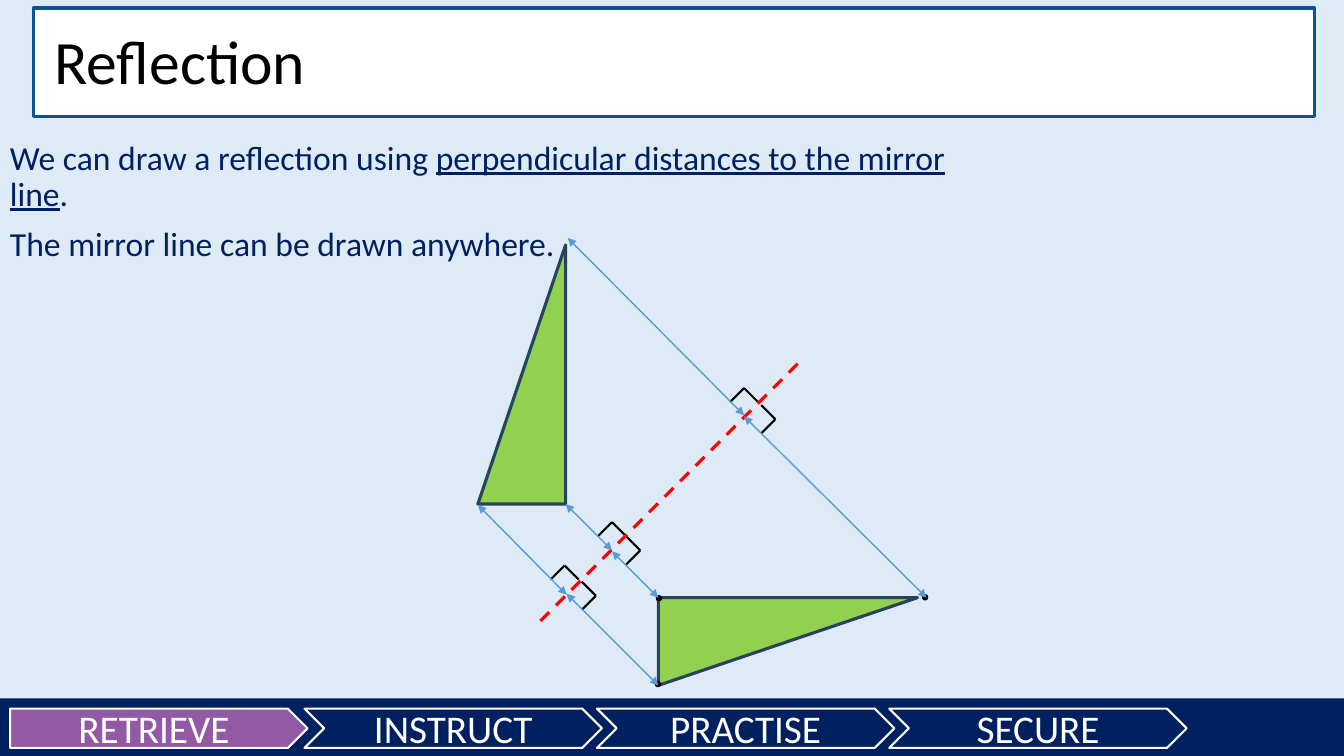
from dataclasses import dataclass

from lxml import etree
from pptx import Presentation
from pptx.dml import color
from pptx.enum import dml, shapes, text
from pptx.oxml import ns
from pptx.util import Emu, Pt

PX = 9144
NAVY, WHITE, BLACK = "002060", "FFFFFF", "000000"
GREEN, SLATE, BLUE, RED = "92D050", "28445D", "5B9BD5", "FF0000"
SHAPE = shapes.MSO_SHAPE


@dataclass
class Box:
    x: int
    y: int
    w: int
    h: int
    kind: SHAPE = SHAPE.RECTANGLE
    fill: str = WHITE
    line: str | None = None
    weight: float = 2.25
    rotation: int = 0
    flipped: bool = False


@dataclass
class Segment:
    x1: int
    y1: int
    x2: int
    y2: int
    line: str = BLUE
    weight: float = 1
    arrows: bool = True
    dashed: bool = False


def px(n: int) -> Emu:
    return Emu(n * PX)


def rgb(value: str) -> color.RGBColor:
    return color.RGBColor.from_string(value)


def add_box(slide, box: Box):
    sp = slide.shapes.add_shape(box.kind, px(box.x), px(box.y), px(box.w), px(box.h))
    sp.shadow.inherit = False
    sp.fill.solid()
    sp.fill.fore_color.rgb = rgb(box.fill)
    if box.line:
        sp.line.color.rgb = rgb(box.line)
        sp.line.width = Pt(box.weight)
    else:
        sp.line.fill.background()
    if box.kind == SHAPE.ISOSCELES_TRIANGLE:
        sp.adjustments[0] = 0
    if box.flipped:
        sp.element.spPr.get_or_add_xfrm().set("flipV", "1")
    sp.rotation = box.rotation
    return sp


def add_segment(slide, seg: Segment) -> None:
    cxn = slide.shapes.add_connector(
        shapes.MSO_CONNECTOR.STRAIGHT, px(seg.x1), px(seg.y1), px(seg.x2), px(seg.y2)
    )
    cxn.line.color.rgb = rgb(seg.line)
    cxn.line.width = Pt(seg.weight)
    if seg.dashed:
        cxn.line.dash_style = dml.MSO_LINE.DASH
    if seg.arrows:
        ln = cxn.line._get_or_add_ln()
        for end in ("a:headEnd", "a:tailEnd"):
            etree.SubElement(ln, ns.qn(end), type="triangle")
    etree.SubElement(cxn._element.spPr, ns.qn("a:effectLst"))


def style(p, size: int, fill: str) -> None:
    p.font.name = "Calibri"
    p.font.size = Pt(size)
    p.font.color.rgb = rgb(fill)


def add_text(slide, x: int, y: int, w: int, h: int, size: int, fill: str,
             paragraphs: list[list[tuple[str, bool]]]):
    tf = slide.shapes.add_textbox(px(x), px(y), px(w), px(h)).text_frame
    tf.word_wrap = True
    for i, runs in enumerate(paragraphs):
        p = tf.add_paragraph() if i else tf.paragraphs[0]
        p.line_spacing = 0.9
        if i:
            p.space_before = Pt(10)
        style(p, size, fill)
        for words, underlined in runs:
            r = p.add_run()
            r.text = words
            if underlined:
                r.font.underline = True
    return tf


def add_stages(slide) -> None:
    for i, name in enumerate(("RETRIEVE", "INSTRUCT", "PRACTISE", "SECURE")):
        kind, fill = (SHAPE.CHEVRON, NAVY) if i else (SHAPE.PENTAGON, "9259A4")
        x = 12 + 290 * i if i else 10
        sp = add_box(slide, Box(x, 703, 295, 39, kind, fill, WHITE, 1.5))
        tf = sp.text_frame
        tf.vertical_anchor = text.MSO_ANCHOR.MIDDLE
        p = tf.paragraphs[0]
        p.text = name
        p.alignment = text.PP_ALIGN.CENTER
        style(p, 28, WHITE)


def add_right_angles(slide) -> None:
    side_corners = [(635, 546), (591, 591), (769, 416)]
    top_corners = [(607, 518), (560, 561), (738, 385)]
    for corners, dx, dy in ((side_corners, -14, -14), (top_corners, 14, 14)):
        for x, y in corners:
            add_segment(slide, Segment(x, y, x - 14, y + 14, BLACK, 1.5, False))
            add_segment(slide, Segment(x, y, x + dx, y + dy, BLACK, 1.5, False))


def main() -> None:
    prs = Presentation()
    prs.slide_width, prs.slide_height = px(1333), px(750)
    slide = prs.slides.add_slide(prs.slide_layouts[6])
    slide.background.fill.solid()
    slide.background.fill.fore_color.rgb = rgb("DEEBF7")

    add_box(slide, Box(33, 8, 1271, 108, line="0B5196"))
    add_box(slide, Box(0, 693, 1333, 57, fill=NAVY))
    add_stages(slide)

    triangle = SHAPE.ISOSCELES_TRIANGLE
    add_box(slide, Box(653, 593, 257, 87, triangle, GREEN, SLATE, flipped=True))
    add_text(slide, 0, 135, 995, 53, 24, NAVY, [
        [("We can draw a reflection using ", False),
         ("perpendicular distances to the mirror line", True), (".", False)],
        [("The mirror line can be drawn anywhere.", False)],
    ])
    title = add_text(slide, 44, 27, 1333, 74, 44, BLACK, [[("Reflection", False)]])
    title.vertical_anchor = text.MSO_ANCHOR.MIDDLE

    add_right_angles(slide)
    add_segment(slide, Segment(536, 616, 797, 355, RED, 2.25, False, True))
    add_box(slide, Box(389, 328, 257, 87, triangle, GREEN, SLATE, rotation=270))
    for x, y in ((651, 591), (650, 676), (915, 590)):
        add_box(slide, Box(x, y, 5, 5, SHAPE.OVAL, BLACK, BLACK, 1, 135))
    for seg in (
        Segment(561, 500, 607, 546), Segment(607, 547, 653, 593),
        Segment(474, 501, 562, 590), Segment(562, 589, 653, 680),
        Segment(563, 236, 738, 412), Segment(738, 413, 919, 593),
    ):
        add_segment(slide, seg)

    prs.save("out.pptx")


if __name__ == "__main__":
    main()
